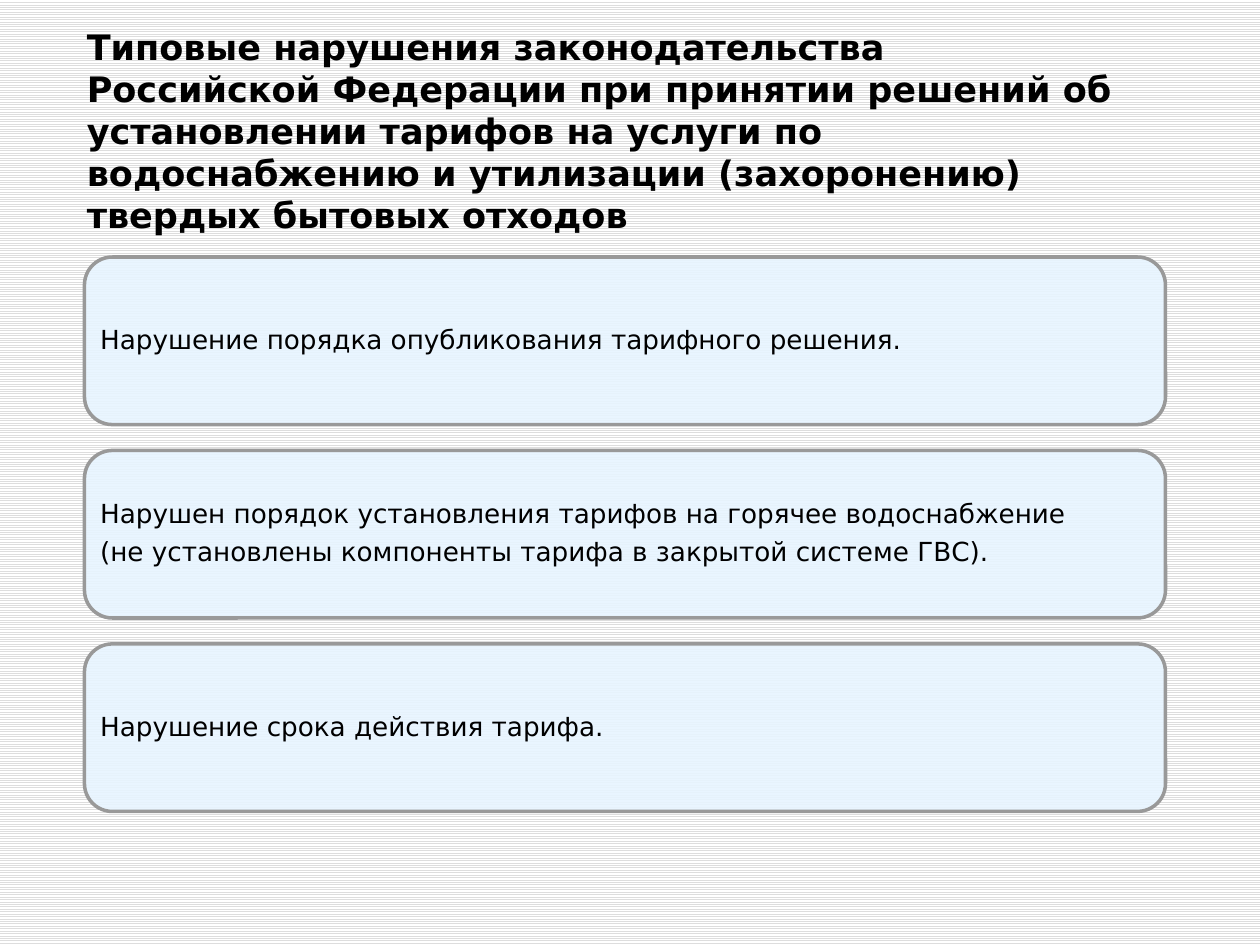
"""Build a slide listing typical violations in setting utility tariffs."""
from lxml import etree
from pptx import Presentation
from pptx.dml.color import RGBColor
from pptx.enum.dml import MSO_PATTERN
from pptx.enum.shapes import MSO_SHAPE
from pptx.enum.text import MSO_ANCHOR, MSO_AUTO_SIZE
from pptx.oxml.ns import qn
from pptx.util import Inches, Pt

ROUNDED = MSO_SHAPE.ROUNDED_RECTANGLE
STRIPES = MSO_PATTERN.LIGHT_HORIZONTAL
MIDDLE, BOTTOM = MSO_ANCHOR.MIDDLE, MSO_ANCHOR.BOTTOM
FIXED = MSO_AUTO_SIZE.NONE
FONT = "DejaVu Sans"
COLORS = {"stripe": "DDDDDD", "paper": "FFFFFF", "card": "E7F5FF",
          "border": "999999", "text": "000000"}
COLORS = {name: RGBColor.from_string(value) for name, value in COLORS.items()}

TITLE = ("Типовые нарушения законодательства \v"
         "Российской Федерации при принятии решений об установлении тарифов "
         "на услуги по водоснабжению и утилизации (захоронению) "
         "твердых бытовых отходов")
VIOLATIONS = [
    ["Нарушение порядка опубликования тарифного решения."],
    ["Нарушен порядок установления тарифов на горячее водоснабжение",
     "(не установлены компоненты тарифа в закрытой системе ГВС)."],
    ["Нарушение срока действия тарифа."],
]

deck = Presentation()
deck.slide_width, deck.slide_height = Inches(10), Inches(7.5)
COLUMN, ROW = deck.slide_width / 100, deck.slide_height / 100
page = deck.slides.add_slide(deck.slide_layouts[6])


def place(left, top, width, height):
    return int(left * COLUMN), int(top * ROW), int(width * COLUMN), int(height * ROW)


def add_text(lines, area, size, anchor, bold=False, spacing=None, after=None,
             side=0.1, top=0.05, bottom=0.05):
    box = page.shapes.add_textbox(*place(*area))
    frame = box.text_frame
    frame.word_wrap, frame.auto_size = True, FIXED
    frame.vertical_anchor = anchor
    frame.margin_left = frame.margin_right = Inches(side)
    frame.margin_top, frame.margin_bottom = Inches(top), Inches(bottom)
    frame.text = "\n".join(lines)
    for para in frame.paragraphs:
        para.line_spacing = spacing
        para.space_after = after
        for span in para.runs:
            span.font.name, span.font.size = FONT, Pt(size)
            span.font.bold = bold
            span.font.color.rgb = COLORS["text"]


backdrop = page.background.fill
backdrop.patterned()
backdrop.pattern = STRIPES
backdrop.fore_color.rgb = COLORS["stripe"]
backdrop.back_color.rgb = COLORS["paper"]

add_text([TITLE], (5.9, 12.27, 87.5, 17.73), 20, BOTTOM, bold=True, bottom=0.38)

CARD_LEFT, CARD_TOP, CARD_WIDTH, CARD_HEIGHT = 6.7, 27.2, 85.8, 17.73
PITCH, INSET_X, INSET_Y = 20.47, 0.65, 0.87

for index, lines in enumerate(VIOLATIONS):
    top = CARD_TOP + index * PITCH
    card = page.shapes.add_shape(ROUNDED, *place(CARD_LEFT, top, CARD_WIDTH, CARD_HEIGHT))
    card.shadow.inherit = False
    card.fill.solid()
    card.fill.fore_color.rgb = COLORS["card"]
    tint = card.fill._xPr.find(qn("a:solidFill"))[0]
    etree.SubElement(tint, qn("a:alpha"), val="90000")
    card.line.color.rgb = COLORS["border"]
    card.line.width = Pt(2)
    area = (CARD_LEFT + INSET_X, top + INSET_Y,
            CARD_WIDTH - 2 * INSET_X, CARD_HEIGHT - 2 * INSET_Y)
    add_text(lines, area, 15, MIDDLE, spacing=0.9, after=Pt(5.25),
             side=0.06, top=0.06, bottom=0.06)

deck.save("out.pptx")
